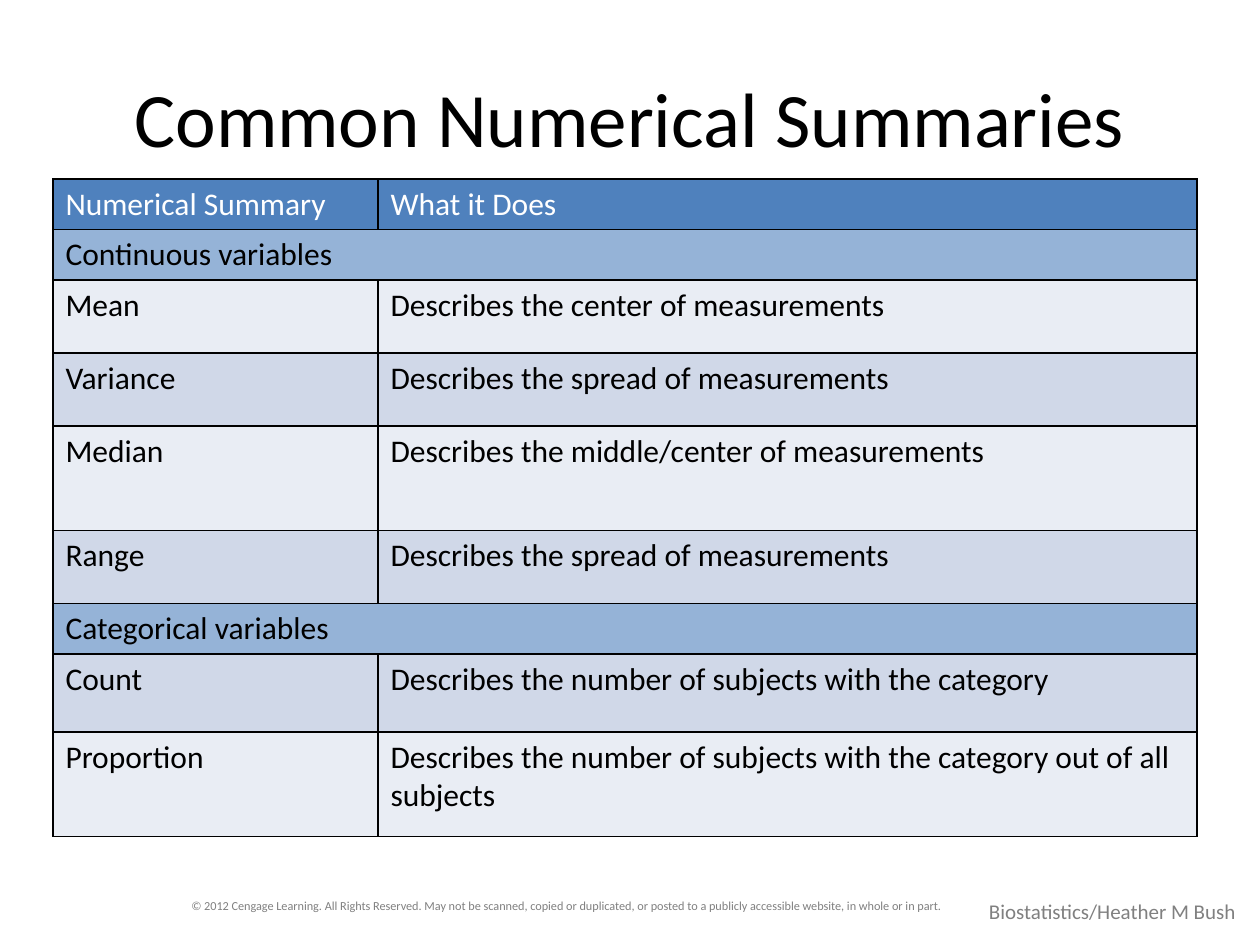
"""Builds a slide with a table of common numerical summaries."""
import lxml.etree
import pptx
import pptx.dml.color
import pptx.enum.shapes
import pptx.enum.text
import pptx.oxml.ns
import pptx.util
from dataclasses import dataclass


@dataclass(frozen=True)
class Theme:
    font: str = "Calibri"
    title_size: int = 44
    table_size: int = 18
    credit_size: int = 12
    copyright_size: int = 7
    black: str = "000000"
    white: str = "FFFFFF"
    grey: str = "808080"
    header: str = "4F81BD"
    section: str = "95B3D7"
    bands: tuple = ("E9EDF4", "D0D8E8")
    border_points: int = 1


theme = Theme()
color = pptx.dml.color.RGBColor.from_string
inches = pptx.util.Inches


def write(frame, text, size, ink):
    span = frame.paragraphs[0].add_run()
    span.text = text
    span.font.name = theme.font
    span.font.size = pptx.util.Pt(size)
    span.font.color.rgb = color(ink)


def add_borders(cell):
    properties = cell._tc.get_or_add_tcPr()
    for side in ("lnL", "lnR", "lnT", "lnB"):
        line = lxml.etree.SubElement(properties, pptx.oxml.ns.qn(f"a:{side}"))
        line.set("w", str(pptx.util.Pt(theme.border_points)))
        fill = lxml.etree.SubElement(line, pptx.oxml.ns.qn("a:solidFill"))
        lxml.etree.SubElement(fill, pptx.oxml.ns.qn("a:srgbClr")).set("val", theme.black)


deck = pptx.Presentation()
deck.slide_width, deck.slide_height = inches(10), inches(7.5)
page = deck.slides.add_slide(deck.slide_layouts[5])

footer_top = inches(7.08)
credit = page.shapes.add_textbox(inches(7.75), footer_top, inches(2.18), inches(0.3))
credit.text_frame.word_wrap = False
write(credit.text_frame, "Biostatistics/Heather M Bush", theme.credit_size, theme.grey)

copyright_box = page.shapes.add_shape(
    pptx.enum.shapes.MSO_SHAPE.RECTANGLE, inches(1.42), footer_top, inches(6.33), inches(0.22)
)
copyright_box.shadow.inherit = False
copyright_box.fill.solid()
copyright_box.fill.fore_color.rgb = color(theme.white)
copyright_box.line.fill.background()
copyright_box.text_frame.word_wrap = True
copyright_box.text_frame.vertical_anchor = pptx.enum.text.MSO_ANCHOR.TOP
copyright_box.text_frame.paragraphs[0].alignment = pptx.enum.text.PP_ALIGN.LEFT
write(
    copyright_box.text_frame,
    "© 2012 Cengage Learning. All Rights Reserved. May not be scanned, copied or duplicated, "
    "or posted to a publicly accessible website, in whole or in part.",
    theme.copyright_size,
    theme.grey,
)

title = page.shapes.title
title.left, title.top = deck.slide_width // 20, deck.slide_height // 25
title.width, title.height = deck.slide_width * 9 // 10, deck.slide_height // 6
title.text_frame.vertical_anchor = pptx.enum.text.MSO_ANCHOR.MIDDLE
title.text_frame.paragraphs[0].alignment = pptx.enum.text.PP_ALIGN.CENTER
write(title.text_frame, "Common Numerical Summaries", theme.title_size, theme.black)

summaries = [
    (0.36, "Numerical Summary", "What it Does"),
    (0.36, "Continuous variables", None),
    (0.58, "Mean", "Describes the center of measurements"),
    (0.58, "Variance", "Describes the spread of measurements"),
    (0.83, "Median", "Describes the middle/center of measurements"),
    (0.58, "Range", "Describes the spread of measurements"),
    (0.36, "Categorical variables", None),
    (0.62, "Count", "Describes the number of subjects with the category"),
    (0.83, "Proportion", "Describes the number of subjects with the category out of all subjects"),
]
column_widths = (2.58, 6.5)
table = page.shapes.add_table(
    len(summaries),
    len(column_widths),
    inches(0.42),
    inches(1.42),
    inches(sum(column_widths)),
    inches(sum(height for height, *_ in summaries)),
).table
for column, width in zip(table.columns, column_widths):
    column.width = inches(width)

for index, (height, *texts) in enumerate(summaries):
    table.rows[index].height = inches(height)
    is_section = texts[1] is None
    if is_section:
        table.cell(index, 0).merge(table.cell(index, 1))
    if index == 0:
        background, ink = theme.header, theme.white
    else:
        background, ink = theme.section if is_section else theme.bands[index % 2], theme.black
    for cell, text in zip(table.rows[index].cells, texts):
        add_borders(cell)
        cell.fill.solid()
        cell.fill.fore_color.rgb = color(background)
        if text:
            write(cell.text_frame, text, theme.table_size, ink)
            cell.text_frame.paragraphs[0].runs[0].font.bold = False

deck.save("out.pptx")
